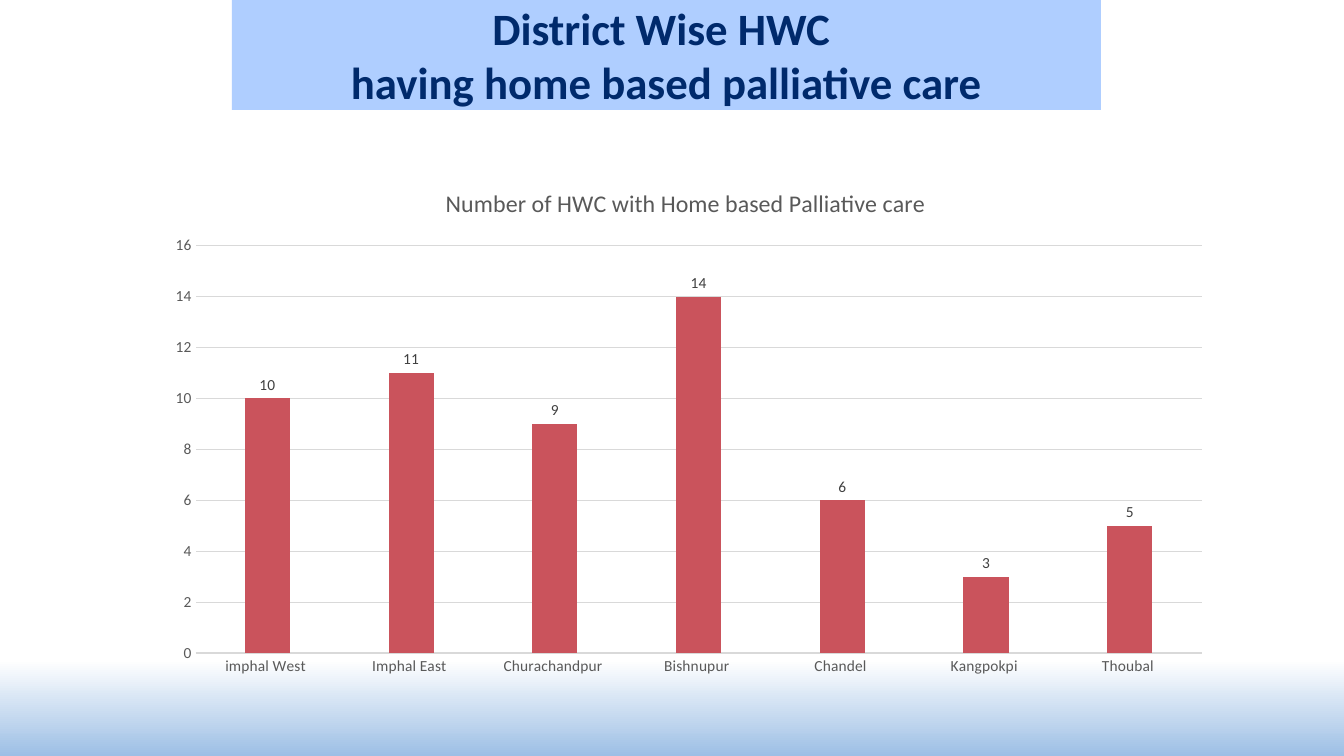
from pptx import Presentation
from pptx.chart.data import CategoryChartData
from pptx.dml.color import RGBColor
from pptx.enum.chart import XL_CHART_TYPE, XL_LABEL_POSITION, XL_TICK_MARK
from pptx.enum.shapes import MSO_SHAPE
from pptx.enum.text import MSO_ANCHOR, MSO_AUTO_SIZE, PP_ALIGN
from pptx.util import Inches, Pt

TITLE = "District Wise HWC \vhaving home based palliative care"
NAME = "Number of HWC with Home based Palliative care "
COUNTS = {
    "imphal West ": 10,
    "Imphal East ": 11,
    "Churachandpur ": 9,
    "Bishnupur ": 14,
    "Chandel ": 6,
    "Kangpokpi ": 3,
    "Thoubal ": 5,
}
COLORS = {
    "white": "FFFFFF", "glow": "9DBFE5", "band": "AFCEFF", "navy": "002A6C",
    "bar": "CA535C", "grid": "D9D9D9", "text": "595959", "label": "404040",
}
FONT = "Calibri"
WIDE, HIGH = 13.33, 7.5
PLACES = {
    "glow": (0, 2.75, WIDE, HIGH - 2.75),
    "title": (2.3, 0, 8.62, 1.09),
    "chart": (1.53, 1.65, 10.6, 5.16),
}


def color(key):
    return RGBColor.from_string(COLORS[key])


def box(key):
    return [Inches(n) for n in PLACES[key]]


def style(font, size, key, bold=False):
    font.name, font.size, font.bold = FONT, Pt(size), bold
    font.color.rgb = color(key)


def rule(line):
    line.color.rgb = color("grid")
    line.width = Pt(0.92)


def add_glow(slide):
    glow = slide.shapes.add_shape(MSO_SHAPE.RECTANGLE, *box("glow"))
    glow.shadow.inherit = False
    glow.line.fill.background()
    glow.fill.gradient()
    glow.fill.gradient_angle = 270
    for stop, place, key in zip(glow.fill.gradient_stops, (0.8, 1), ("white", "glow")):
        stop.position = place
        stop.color.rgb = color(key)


def set_title(slide):
    title = slide.shapes.title
    title.left, title.top, title.width, title.height = box("title")
    title.fill.solid()
    title.fill.fore_color.rgb = color("band")
    frame = title.text_frame
    frame.text = TITLE
    frame.word_wrap = True
    frame.auto_size = MSO_AUTO_SIZE.NONE
    frame.vertical_anchor = MSO_ANCHOR.MIDDLE
    frame.margin_left = frame.margin_right = Inches(0.07)
    frame.margin_top = frame.margin_bottom = Inches(0.04)
    line = frame.paragraphs[0]
    line.alignment = PP_ALIGN.CENTER
    style(line.font, 32, "navy", True)


def add_bars(slide):
    data = CategoryChartData()
    data.categories = list(COUNTS)
    data.add_series(NAME, list(COUNTS.values()))
    chart = slide.shapes.add_chart(XL_CHART_TYPE.COLUMN_CLUSTERED, *box("chart"), data).chart
    chart.font.name, chart.font.size = FONT, Pt(10)
    chart.has_legend = False
    chart.has_title = True
    head = chart.chart_title.text_frame
    head.text = NAME
    style(head.paragraphs[0].font, 17.1, "text")
    chart.chart_title.include_in_layout = False

    for axis in (chart.category_axis, chart.value_axis):
        axis.major_tick_mark = axis.minor_tick_mark = XL_TICK_MARK.NONE
        style(axis.tick_labels.font, 11, "text")
    rule(chart.category_axis.format.line)
    scale = chart.value_axis
    scale.minimum_scale, scale.maximum_scale, scale.major_unit = 0, 16, 2
    scale.format.line.fill.background()
    rule(scale.major_gridlines.format.line)

    plot = chart.plots[0]
    plot.gap_width, plot.overlap = 219, -27
    plot.vary_by_categories = False
    bars = plot.series[0]
    bars.format.fill.solid()
    bars.format.fill.fore_color.rgb = color("bar")
    labels = bars.data_labels
    labels.show_value = True
    labels.position = XL_LABEL_POSITION.OUTSIDE_END
    style(labels.font, 11, "label")


def main():
    deck = Presentation()
    deck.slide_width, deck.slide_height = Inches(WIDE), Inches(HIGH)
    slide = deck.slides.add_slide(deck.slide_layouts[5])
    add_glow(slide)
    set_title(slide)
    add_bars(slide)
    deck.save("out.pptx")


if __name__ == "__main__":
    main()
